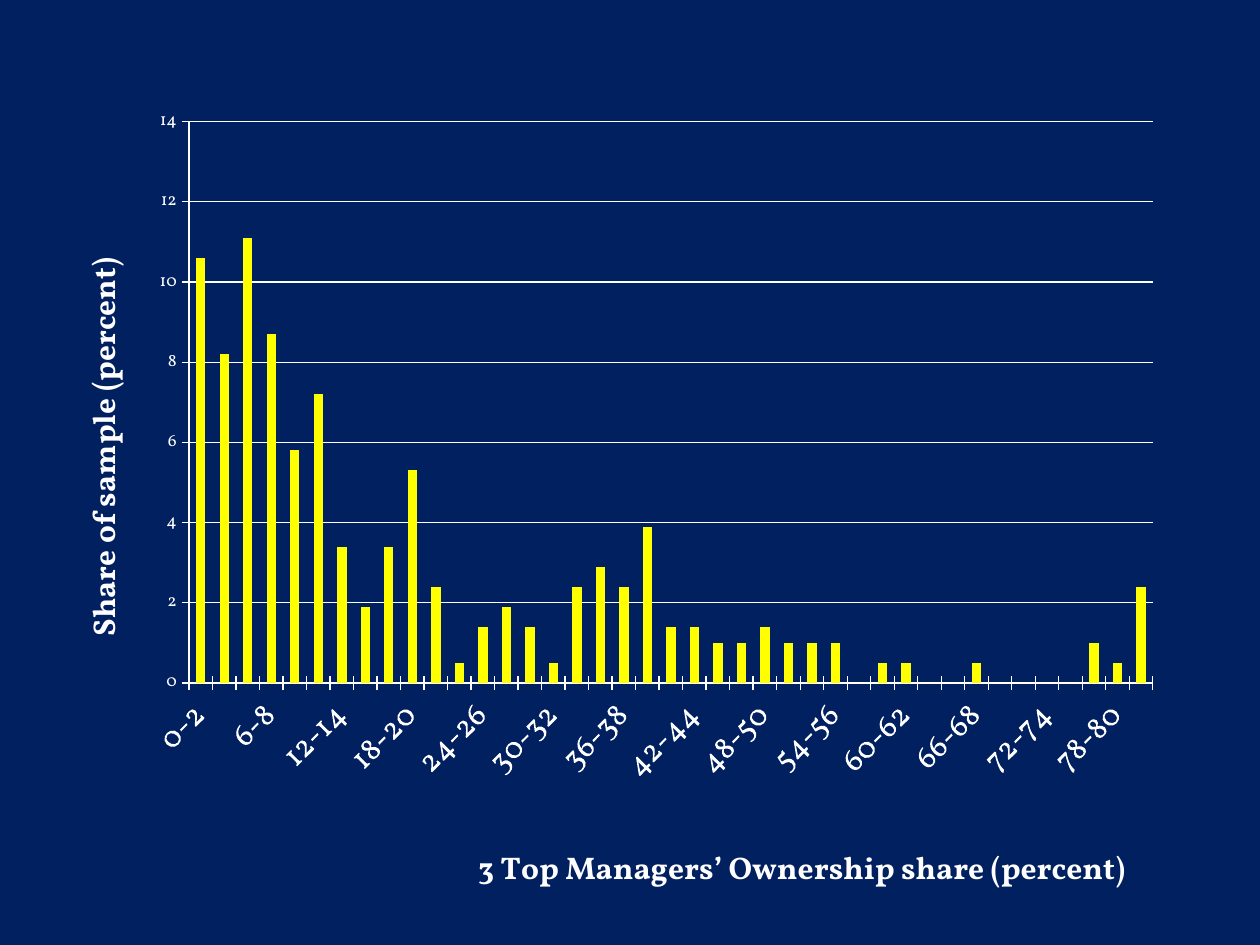
from lxml import etree
from pptx import Presentation
from pptx.chart.data import CategoryChartData
from pptx.dml.color import RGBColor
from pptx.enum import chart as ch
from pptx.oxml import ns
from pptx.util import Inches, Pt

NAVY = RGBColor(0x00, 0x20, 0x60)
WHITE = RGBColor(0xFF, 0xFF, 0xFF)
YELLOW = RGBColor(0xFF, 0xFF, 0x00)
FONT = "Vollkorn"

SHARES = [
    10.6, 8.2, 11.1, 8.7, 5.8, 7.2, 3.4, 1.9, 3.4, 5.3, 2.4, 0.5, 1.4, 1.9,
    1.4, 0.5, 2.4, 2.9, 2.4, 3.9, 1.4, 1.4, 1, 1, 1.4, 1, 1, 1, 0, 0.5, 0.5,
    0, 0, 0.5, 0, 0, 0, 0, 1, 0.5, 2.4,
]
BINS = [f"{low}-{low + 2}" for low in range(0, 80, 2)] + ["80+"]


def set_font(font, size, bold=False):
    font.name = FONT
    font.size = Pt(size)
    font.bold = bold
    font.color.rgb = WHITE


def set_layout(parent, index, **values):
    for old in parent.findall(ns.qn("c:layout")):
        parent.remove(old)
    layout = etree.Element(ns.qn("c:layout"))
    manual = etree.SubElement(layout, ns.qn("c:manualLayout"))
    for tag, value in values.items():
        etree.SubElement(manual, ns.qn(f"c:{tag}")).set("val", str(value))
    parent.insert(index, layout)


def style_axis(axis, title, size, x, y, rotation):
    set_font(axis.tick_labels.font, size)
    axis.format.line.color.rgb = WHITE
    axis.major_tick_mark = ch.XL_TICK_MARK.CROSS
    tf = axis.axis_title.text_frame
    tf.text = title
    set_font(tf.paragraphs[0].runs[0].font, 18, bold=True)
    body = tf._txBody.find(ns.qn("a:bodyPr"))
    body.set("rot", str(rotation * 60000))
    body.set("vert", "horz")
    set_layout(axis.axis_title._element, 1, xMode="edge", yMode="edge", x=x, y=y)


def style_categories(axis):
    style_axis(axis, "3 Top Managers’ Ownership share (percent)", 18, 0.38, 0.93, 0)
    body = axis._element.find(ns.qn("c:txPr")).find(ns.qn("a:bodyPr"))
    body.set("rot", str(-45 * 60000))
    body.set("vert", "horz")
    skip = etree.Element(ns.qn("c:tickLblSkip"))
    skip.set("val", "3")
    axis._element.find(ns.qn("c:noMultiLvlLbl")).addprevious(skip)


def style_values(axis):
    style_axis(axis, "Share of sample (percent)", 10, 0.03, 0.2, -90)
    axis.minimum_scale = 0
    axis.maximum_scale = 14
    axis.major_unit = 2
    axis.has_major_gridlines = True
    axis.major_gridlines.format.line.color.rgb = WHITE


def add_histogram(slide):
    data = CategoryChartData()
    data.categories = BINS
    data.add_series("Series 1", SHARES)
    chart = slide.shapes.add_chart(
        ch.XL_CHART_TYPE.COLUMN_CLUSTERED,
        Inches(0.33), Inches(0.75), Inches(9), Inches(6.42), data,
    ).chart
    chart.has_title = False
    chart.has_legend = False
    set_font(chart.font, 10)
    style_categories(chart.category_axis)
    style_values(chart.value_axis)
    plot = chart.plots[0]
    plot.gap_width = 150
    plot.vary_by_categories = False
    fill = plot.series[0].format.fill
    fill.solid()
    fill.fore_color.rgb = YELLOW
    area = chart._chartSpace.find(".//" + ns.qn("c:plotArea"))
    set_layout(area, 0, layoutTarget="inner", xMode="edge", yMode="edge",
               x=0.13, y=0.034, w=0.85, h=0.7)


def main():
    prs = Presentation()
    prs.slide_width = Inches(10)
    prs.slide_height = Inches(7.5)
    slide = prs.slides.add_slide(prs.slide_layouts[6])
    fill = slide.background.fill
    fill.solid()
    fill.fore_color.rgb = NAVY
    add_histogram(slide)
    prs.save("out.pptx")


if __name__ == "__main__":
    main()
